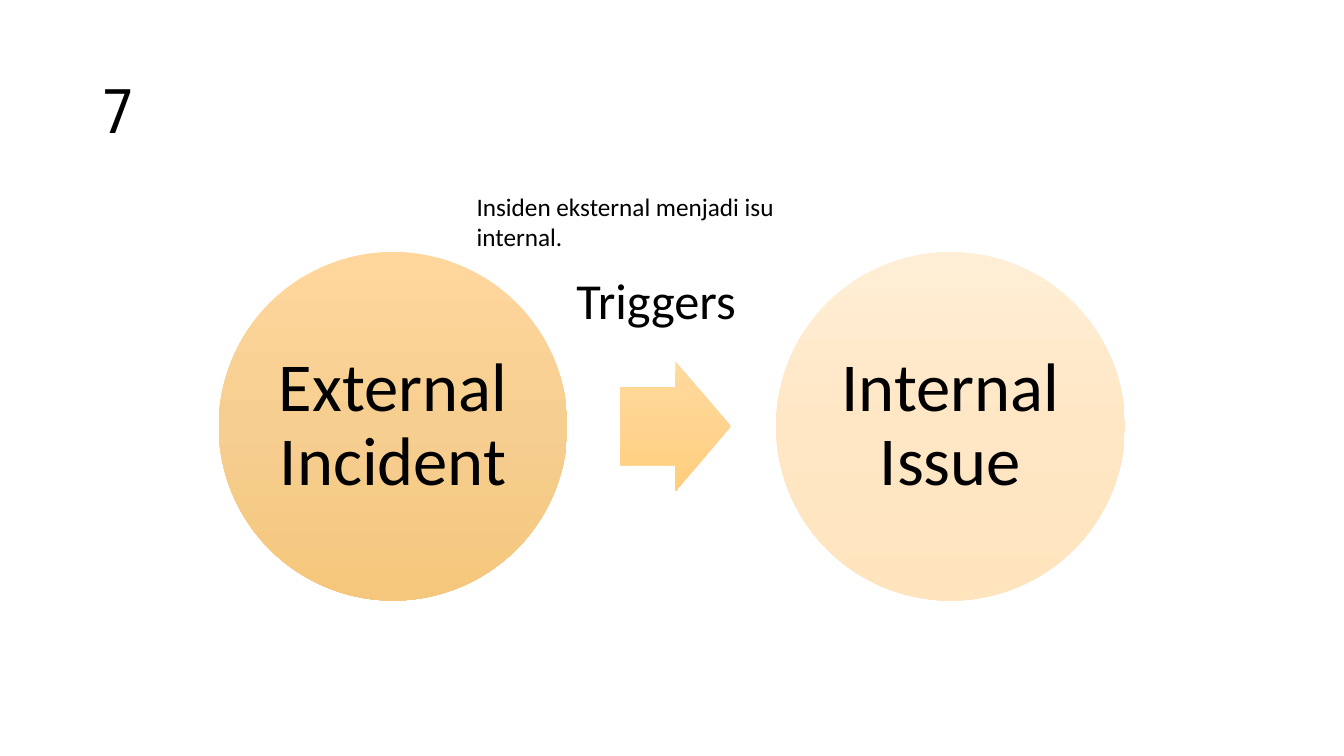
from copy import deepcopy
from dataclasses import dataclass

from pptx import Presentation
from pptx import util as u
from pptx.dml.color import RGBColor
from pptx.enum import shapes, text


@dataclass(frozen=True)
class Theme:
    ink: str = "000000"
    incident: tuple = ("FFD79D", "F6CE90", "F5C77C")
    trigger: tuple = ("FFD99E", "FFD490", "FFCE7C")
    issue: tuple = ("FFEED6", "FFE7C5", "FFE4BE")
    title_font: str = "Roboto Condensed"
    body_font: str = "Calibri"
    title_size: int = 44
    circle_size: int = 49
    trigger_size: int = 36
    note_size: int = 18


THEME = Theme()
WIDTH, HEIGHT = u.Inches(13.33), u.Inches(7.5)
MODULE = WIDTH / 40  # square grid: 40 columns, 22.5 rows
MIDDLE_ROW = 12.69   # shared centre line of the circles and the arrow
DIAMETER = 10.38


def place(*cells):
    """Turn left, top, width and height in grid modules into lengths."""
    return [u.Emu(round(cell * MODULE)) for cell in cells]


def write(frame, words, size, font=THEME.body_font, align=text.PP_ALIGN.LEFT,
          anchor=text.MSO_ANCHOR.TOP, spacing=1.0):
    frame.word_wrap = True
    frame.vertical_anchor = anchor
    paragraph = frame.paragraphs[0]
    paragraph.alignment = align
    paragraph.line_spacing = spacing
    run = paragraph.add_run()
    run.text = words
    run.font.size = u.Pt(size)
    run.font.name = font
    run.font.color.rgb = RGBColor.from_string(THEME.ink)


def add_label(slide, cells, words, size, **style):
    label = slide.shapes.add_textbox(*place(*cells))
    write(label.text_frame, words, size, **style)


def add_gradient_shape(slide, kind, left, width, height, colors):
    """Add a borderless shape on the centre line, shaded from top to bottom."""
    top = MIDDLE_ROW - height / 2
    shape = slide.shapes.add_shape(kind, *place(left, top, width, height))
    shape.shadow.inherit = False
    shape.line.fill.background()
    shape.fill.gradient()
    shape.fill.gradient_angle = 270
    # A new gradient has two stops; add the middle one
    first_stop = shape.element.xpath(".//a:gs")[0]
    first_stop.addnext(deepcopy(first_stop))
    for stop, position, color in zip(shape.fill.gradient_stops, (0, 0.5, 1), colors):
        stop.position = position
        stop.color.rgb = RGBColor.from_string(color)
    return shape


def add_circle(slide, left, words, colors):
    circle = add_gradient_shape(slide, shapes.MSO_SHAPE.OVAL, left,
                                DIAMETER, DIAMETER, colors)
    frame = circle.text_frame
    frame.margin_left = frame.margin_right = u.Inches(0.07)
    frame.margin_top = frame.margin_bottom = u.Inches(0.07)
    write(frame, words, THEME.circle_size, align=text.PP_ALIGN.CENTER,
          anchor=text.MSO_ANCHOR.MIDDLE, spacing=0.9)


def add_arrow(slide, left, width, height, colors):
    arrow = add_gradient_shape(slide, shapes.MSO_SHAPE.RIGHT_ARROW, left,
                               width, height, colors)
    arrow.adjustments[0] = 0.6
    arrow.adjustments[1] = 0.5


def main():
    deck = Presentation()
    deck.slide_width, deck.slide_height = WIDTH, HEIGHT
    slide = deck.slides.add_slide(deck.slide_layouts[6])

    # Title
    add_label(slide, (2.76, 1.2, 34.5, 4.35), "7", THEME.title_size,
              font=THEME.title_font, anchor=text.MSO_ANCHOR.MIDDLE, spacing=0.9)

    # Cause, arrow and effect
    add_circle(slide, 6.51, "External Incident", THEME.incident)
    add_arrow(slide, 18.45, 3.3, 3.87, THEME.trigger)
    add_circle(slide, 23.1, "Internal Issue", THEME.issue)

    # Arrow caption and note
    add_label(slide, (16.86, 7.86, 7.05, 2.13), "Triggers", THEME.trigger_size)
    add_label(slide, (13.89, 5.55, 11.46, 2.13),
              "Insiden eksternal menjadi isu internal.", THEME.note_size)

    deck.save("out.pptx")


if __name__ == "__main__":
    main()
